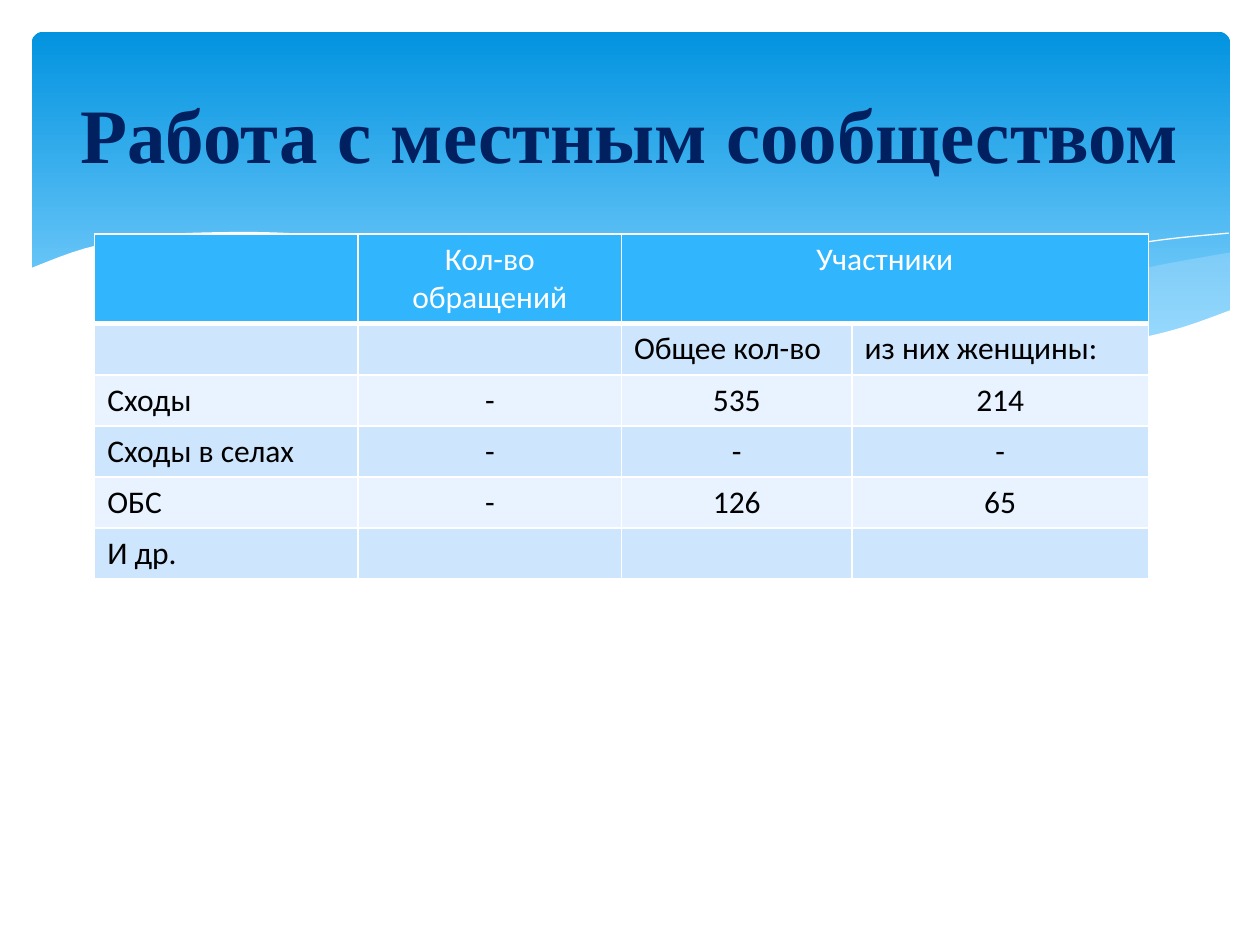
from lxml import etree
from pptx import Presentation
from pptx.dml.color import RGBColor
from pptx.enum import shapes, text
from pptx.oxml import ns
from pptx.util import Cm, Pt

WHITE = RGBColor(0xFF, 0xFF, 0xFF)
BLACK = RGBColor(0, 0, 0)
NAVY = RGBColor(0x00, 0x20, 0x60)
BAND_TOP = RGBColor(0x02, 0x93, 0xE0)
BAND_BOTTOM = RGBColor(0x83, 0xD3, 0xFE)
MIST = RGBColor(0xC6, 0xE7, 0xFC)
HEADER = RGBColor(0x31, 0xB6, 0xFD)
ROW_DARK = RGBColor(0xCE, 0xE5, 0xFE)
ROW_LIGHT = RGBColor(0xE8, 0xF3, 0xFF)

# Wave knots in centimetres from the band's top left corner
RIGHT_SWOOSH = (
    [(24.16, 4.45), (22.76, 4.7), (21.23, 5.03), (18.49, 5.66), (16.15, 6.1)],
    [(16.15, 6.1), (17.27, 6.25), (18.59, 6.38), (20.04, 6.43), (21.51, 6.32),
     (22.94, 6.05), (24.16, 5.64)],
)
MIDDLE_SWOOSH = (
    [(22.05, 6.3), (19.86, 5.97), (17.3, 5.46), (15.34, 5), (13.11, 4.52),
     (11.18, 4.22), (9.02, 4.06), (7.7, 4.11), (6.63, 4.22)],
    [(6.63, 4.22), (8.56, 4.52), (10.77, 5), (12.83, 5.46), (15.06, 5.92),
     (17.02, 6.22), (18.69, 6.4), (20.14, 6.43), (22.05, 6.3)],
)
FALLING_LINE = [(7.21, 4.32), (8.33, 4.17), (9.93, 4.11), (11.79, 4.19), (14.15, 4.45),
                (16.26, 4.78), (18.67, 5.28), (20.47, 5.74), (22.4, 6.27)]
RISING_LINE = [(14.94, 5.89), (17.02, 5.33), (19.08, 4.85), (21.36, 4.42),
               (22.83, 4.19), (24.13, 4.06)]
WHITE_WAVE = (
    [(24.18, 5.61), (22.99, 6.02), (21.59, 6.3), (19.91, 6.4), (17.81, 6.27),
     (15.27, 5.92), (12.8, 5.44), (10.72, 4.95), (8.64, 4.5), (6.78, 4.19),
     (5.21, 4.06), (3.86, 4.04), (2.39, 4.11), (1.07, 4.37), (-0.05, 4.78)],
    [(-0.05, 7.72), (24.18, 7.72)],
)

COLUMN_WIDTHS = [5.31, 5.31, 4.65, 5.97]
ROW_HEIGHTS = [1.63] + [0.94] * 5
ROWS = [
    ["", "Кол-во обращений", "Участники", ""],
    ["", "", "Общее кол-во", "из них женщины:"],
    ["Сходы", "-", "535", "214"],
    ["Сходы в селах", "-", "-", "-"],
    ["ОБС", "-", "126", "65"],
    ["И др.", "", "", ""],
]


def smooth(knots, steps=5):
    """Catmull-Rom curve through the knots."""
    if len(knots) < 3:
        return knots
    padded = [knots[0], *knots, knots[-1]]
    points = [knots[0]]
    for a, b, c, d in zip(padded, padded[1:], padded[2:], padded[3:]):
        for step in range(1, steps + 1):
            t = step / steps
            points.append(tuple(
                (2 * q + (r - p) * t + (2 * p - 5 * q + 4 * r - s) * t ** 2
                 + (3 * q - p - 3 * r + s) * t ** 3) / 2
                for p, q, r, s in zip(a, b, c, d)))
    return points


def add_wave(slide, left, top, curves, fill=None, opacity=100):
    """Filled outline, or an open white line when no fill is given."""
    points = [(Cm(left + x), Cm(top + y)) for curve in curves for x, y in smooth(curve)]
    builder = slide.shapes.build_freeform(*points[0])
    builder.add_line_segments(points[1:], close=fill is not None)
    shape = builder.convert_to_shape()
    shape.shadow.inherit = False
    if fill is None:
        shape.fill.background()
        shape.line.color.rgb = WHITE
        shape.line.width = Pt(0)
        return
    shape.line.fill.background()
    shape.fill.solid()
    shape.fill.fore_color.rgb = fill
    if opacity < 100:
        color = shape._element.spPr.find(".//" + ns.qn("a:srgbClr"))
        etree.SubElement(color, ns.qn("a:alpha"), val=str(opacity * 1000))


def add_band(slide, left, top, width, height):
    # Gradient background
    band = slide.shapes.add_shape(shapes.MSO_SHAPE.ROUNDED_RECTANGLE,
                                  Cm(left), Cm(top), Cm(width), Cm(height))
    band.adjustments[0] = 0.034
    band.shadow.inherit = False
    band.line.fill.background()
    band.fill.gradient()
    band.fill.gradient_angle = 270
    stops = zip(band.fill.gradient_stops, (BAND_TOP, BAND_BOTTOM), (0, 0.9))
    for stop, color, position in stops:
        stop.color.rgb = color
        stop.position = position

    # Waves, from back to front
    add_wave(slide, left, top, RIGHT_SWOOSH, MIST, 29)
    add_wave(slide, left, top, MIDDLE_SWOOSH, MIST, 40)
    add_wave(slide, left, top, [FALLING_LINE])
    add_wave(slide, left, top, [RISING_LINE])
    add_wave(slide, left, top, WHITE_WAVE, WHITE)


def add_run(paragraph, words, font_name, size, color, bold=False):
    run = paragraph.add_run()
    run.text = words
    run.font.name = font_name
    run.font.size = Pt(size)
    run.font.color.rgb = color
    run.font.bold = bold


def place_title(slide, left, top, width, height):
    title = slide.shapes.title
    title.left, title.top, title.width, title.height = map(Cm, (left, top, width, height))
    frame = title.text_frame
    frame.word_wrap = True
    frame.vertical_anchor = text.MSO_ANCHOR.MIDDLE
    paragraph = frame.paragraphs[0]
    paragraph.alignment = text.PP_ALIGN.CENTER
    add_run(paragraph, "Работа с местным сообществом", "Times New Roman", 44, NAVY, True)
    # Bring the title in front of the band
    slide.shapes._spTree.append(title._element)


def set_borders(cell, bottom_width):
    properties = cell._tc.get_or_add_tcPr()
    widths = {"lnL": 1, "lnR": 1, "lnT": 1, "lnB": bottom_width}
    for index, (side, width) in enumerate(widths.items()):
        line = etree.Element(ns.qn("a:" + side), w=str(Pt(width)))
        fill = etree.SubElement(line, ns.qn("a:solidFill"))
        etree.SubElement(fill, ns.qn("a:srgbClr"), val=str(WHITE))
        properties.insert(index, line)


def add_meetings_table(slide, left, top, width, height):
    table = slide.shapes.add_table(len(ROWS), len(COLUMN_WIDTHS),
                                   Cm(left), Cm(top), Cm(width), Cm(height)).table
    table.first_row = table.horz_banding = False
    for column, column_width in zip(table.columns, COLUMN_WIDTHS):
        column.width = Cm(column_width)
    for row, row_height in zip(table.rows, ROW_HEIGHTS):
        row.height = Cm(row_height)
    table.cell(0, 2).merge(table.cell(0, 3))

    for i, row in enumerate(ROWS):
        for j, words in enumerate(row):
            cell = table.cell(i, j)
            cell.fill.solid()
            cell.fill.fore_color.rgb = HEADER if i == 0 else ROW_DARK if i % 2 else ROW_LIGHT
            set_borders(cell, 3 if i == 0 else 1)
            if words:
                paragraph = cell.text_frame.paragraphs[0]
                if j > 0 and i != 1:
                    paragraph.alignment = text.PP_ALIGN.CENTER
                add_run(paragraph, words, "Calibri", 18, BLACK if i else WHITE)


def main():
    presentation = Presentation()
    presentation.slide_width, presentation.slide_height = Cm(25.4), Cm(19.05)
    slide = presentation.slides.add_slide(presentation.slide_layouts[5])
    add_band(slide, 0.64, 0.64, 24.16, 6.86)
    place_title(slide, 1.27, 0.94, 22.86, 3.48)
    add_meetings_table(slide, 1.91, 4.72, sum(COLUMN_WIDTHS), sum(ROW_HEIGHTS))
    presentation.save("out.pptx")


if __name__ == "__main__":
    main()
